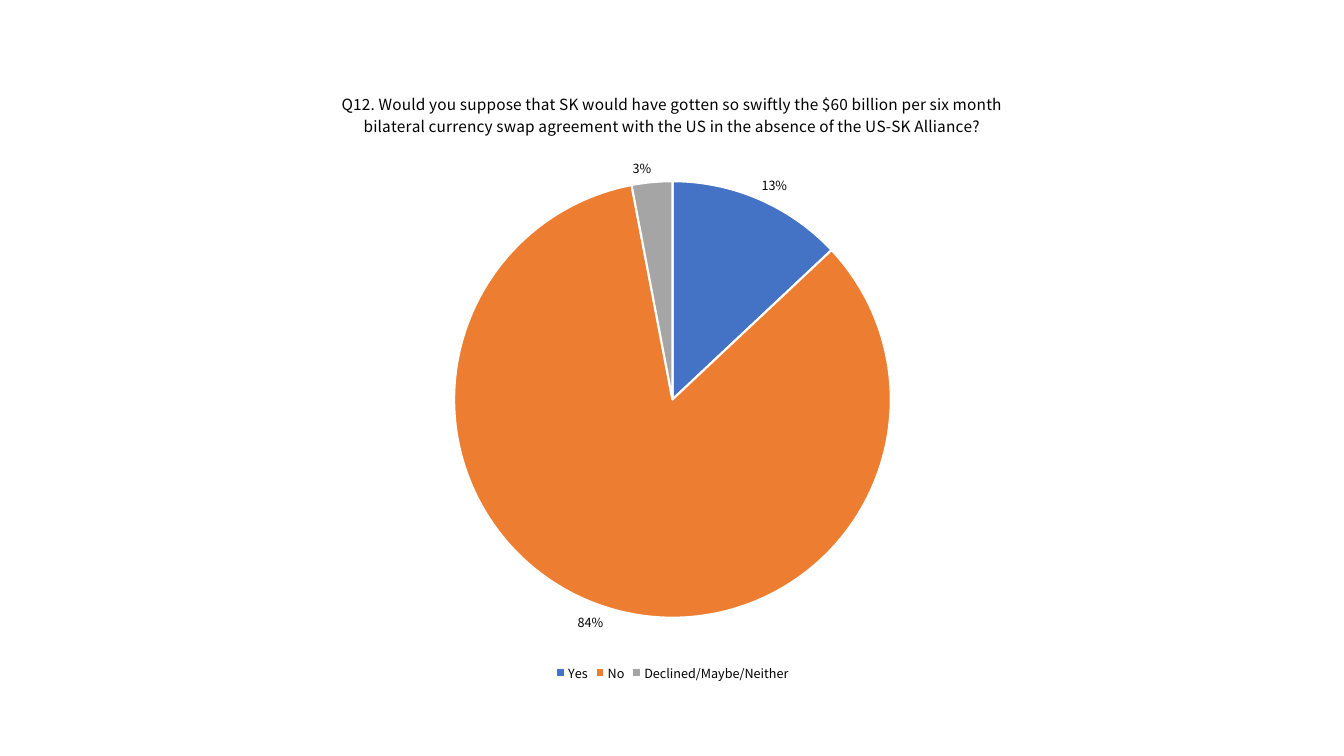
import pptx
import pptx.chart.data
import pptx.dml.color
import pptx.enum.chart
import pptx.oxml
import pptx.oxml.ns
import pptx.util
from pptx.util import Inches

RGBColor = pptx.dml.color.RGBColor
BLACK = RGBColor(0x00, 0x00, 0x00)
WHITE = RGBColor(0xFF, 0xFF, 0xFF)
BLUE = RGBColor(0x44, 0x72, 0xC4)
ORANGE = RGBColor(0xED, 0x7D, 0x31)
GRAY = RGBColor(0xA5, 0xA5, 0xA5)

QUESTION = (
    "Q12. Would you suppose that SK would have gotten so swiftly the $60 billion "
    "per six month bilateral currency swap agreement with the US in the absence "
    "of the US-SK Alliance?"
)
ANSWERS = [
    ("Yes", 0.13, BLUE),
    ("No", 0.84, ORANGE),
    ("Declined/Maybe/Neither", 0.03, GRAY),
]


class SurveySlide:
    font_name = "Noto Sans CJK KR"
    title_size = 11
    text_size = 9

    def __init__(self, deck):
        self.page = deck.slides.add_slide(deck.slide_layouts[6])

    def style_font(self, font, size):
        font.name = self.font_name
        font.size = pptx.util.Pt(size)
        font.bold = False
        font.color.rgb = BLACK

    def add_pie(self, question, answers, left, top, width, height):
        data = pptx.chart.data.CategoryChartData(number_format="0%")
        data.categories = [name for name, share, color in answers]
        data.add_series(question, [share for name, share, color in answers])
        chart = self.page.shapes.add_chart(
            pptx.enum.chart.XL_CHART_TYPE.PIE, left, top, width, height, data
        ).chart
        self.style_font(chart.font, self.text_size)
        self.add_title(chart, question)
        self.add_legend(chart)
        self.add_labels(chart.plots[0])
        self.color_slices(chart.plots[0], [color for name, share, color in answers])
        self.place_plot(chart, x=0.26, y=0.18, w=0.48, h=0.71)

    def add_title(self, chart, question):
        chart.has_title = True
        chart.chart_title.include_in_layout = False
        para = chart.chart_title.text_frame.paragraphs[0]
        para.text = question
        self.style_font(para.font, self.title_size)

    def add_legend(self, chart):
        chart.has_legend = True
        chart.legend.position = pptx.enum.chart.XL_LEGEND_POSITION.BOTTOM
        chart.legend.include_in_layout = False
        self.style_font(chart.legend.font, self.text_size)

    def add_labels(self, plot):
        plot.has_data_labels = True
        labels = plot.data_labels
        labels.show_value = True
        labels.show_percentage = False
        labels.number_format = "0%"
        labels.number_format_is_linked = False
        labels.position = pptx.enum.chart.XL_LABEL_POSITION.OUTSIDE_END
        self.style_font(labels.font, self.text_size)

    def color_slices(self, plot, colors):
        plot.vary_by_categories = True
        for index, color in enumerate(colors):
            piece = plot.series[0].points[index].format
            piece.fill.solid()
            piece.fill.fore_color.rgb = color
            piece.line.color.rgb = WHITE
            piece.line.width = pptx.util.Pt(1.5)

    def place_plot(self, chart, **fractions):
        area = chart.plots[0]._element.getparent()
        for old in area.findall(pptx.oxml.ns.qn("c:layout")):
            area.remove(old)
        settings = {"layoutTarget": "inner", "xMode": "edge", "yMode": "edge", **fractions}
        content = "".join(f'<c:{key} val="{value}"/>' for key, value in settings.items())
        area.insert(0, pptx.oxml.parse_xml(
            f'<c:layout {pptx.oxml.ns.nsdecls("c")}>'
            f"<c:manualLayout>{content}</c:manualLayout></c:layout>"
        ))


def main():
    deck = pptx.Presentation()
    deck.slide_width = Inches(13.33)
    deck.slide_height = Inches(7.5)
    survey = SurveySlide(deck)
    survey.add_pie(
        QUESTION, ANSWERS, Inches(2.14), Inches(0.7), Inches(9.06), Inches(6.1)
    )
    deck.save("out.pptx")


if __name__ == "__main__":
    main()
